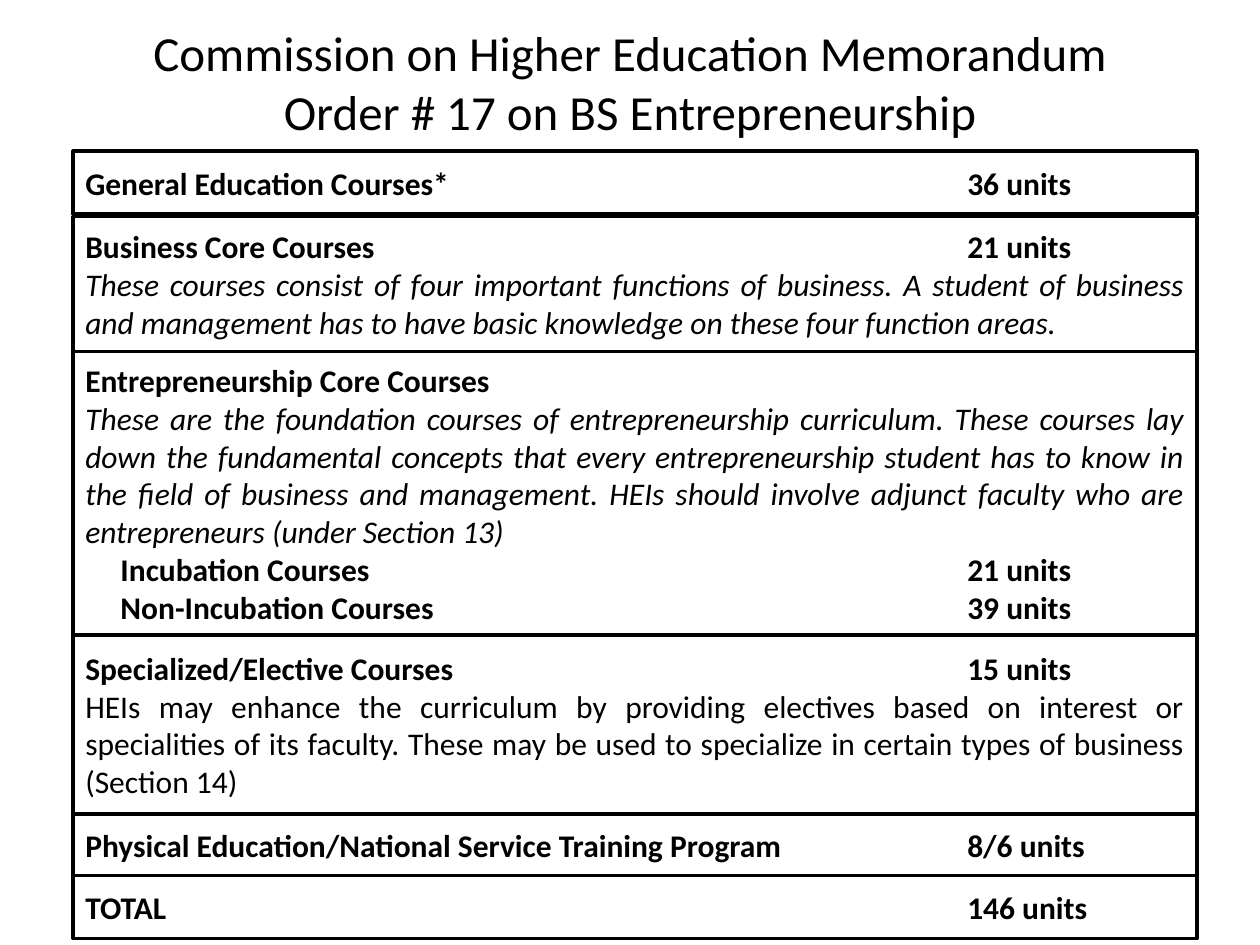
from dataclasses import dataclass

from lxml.etree import SubElement
from pptx import Presentation
from pptx.dml.color import RGBColor
from pptx.enum.shapes import MSO_SHAPE
from pptx.enum.text import MSO_ANCHOR, MSO_AUTO_SIZE, PP_ALIGN
from pptx.oxml.ns import qn
from pptx.util import Cm, Pt


@dataclass(frozen=True)
class Theme:
    """Colours, typeface and sizes of the slide."""
    font: str = "Calibri"
    ink: RGBColor = RGBColor(0x00, 0x00, 0x00)
    paper: RGBColor = RGBColor(0xFF, 0xFF, 0xFF)
    title_size: Pt = Pt(28)
    body_size: Pt = Pt(18)
    border: Pt = Pt(2)


@dataclass(frozen=True)
class Box:
    """A rectangle in centimetres."""
    left: float
    top: float
    width: float
    height: float


@dataclass(frozen=True)
class Line:
    """One paragraph of a course row."""
    text: str
    bold: bool = False
    italic: bool = False
    indented: bool = False


@dataclass(frozen=True)
class Row:
    """A course row with its height and the gap below it, in centimetres."""
    height: float
    lines: tuple
    gap: float = 0


THEME = Theme()
TITLE_BOX = Box(1.27, 0.05, 22.86, 3.18)
ROWS_BOX = Box(1.47, 3.05, 22.66, 15.87)
INDENT_TAB = 0.71
UNITS_TAB = 17.78
TITLE = "Commission on Higher Education Memorandum\vOrder # 17 on BS Entrepreneurship"
ROWS = (
    Row(1.27, (Line("General Education Courses*\t36 units", bold=True),), gap=0.05),
    Row(2.72, (
        Line("Business Core Courses\t21 units", bold=True),
        Line("These courses consist of four important functions of business. "
             "A student of business and management has to have basic knowledge "
             "on these four function areas.", italic=True),
    )),
    Row(5.71, (
        Line("Entrepreneurship Core Courses", bold=True),
        Line("These are the foundation courses of entrepreneurship curriculum. "
             "These courses lay down the fundamental concepts that every "
             "entrepreneurship student has to know in the field of business and "
             "management. HEIs should involve adjunct faculty who are "
             "entrepreneurs (under Section 13)", italic=True),
        Line("\tIncubation Courses\t21 units", bold=True, indented=True),
        Line("\tNon-Incubation Courses\t39 units", bold=True, indented=True),
    )),
    Row(3.61, (
        Line("Specialized/Elective Courses\t15 units", bold=True),
        Line("HEIs may enhance the curriculum by providing electives based on "
             "interest or specialities of its faculty. These may be used to "
             "specialize in certain types of business (Section 14)"),
    )),
    Row(1.24, (Line("Physical Education/National Service Training Program\t8/6 units",
                    bold=True),)),
    Row(1.27, (Line("TOTAL\t146 units", bold=True),)),
)


def style_font(font, size, bold=False, italic=False):
    """Apply the theme typeface and ink to a font."""
    font.name = THEME.font
    font.size = size
    font.bold = bold
    font.italic = italic
    font.color.rgb = THEME.ink


def add_tab_stops(para, positions):
    """Give a paragraph left tab stops at the given centimetres."""
    tab_list = SubElement(para._p.get_or_add_pPr(), qn("a:tabLst"))
    for position in positions:
        SubElement(tab_list, qn("a:tab"), pos=str(int(Cm(position))), algn="l")


def place_title(slide, box):
    """Move and format the title placeholder."""
    title = slide.shapes.title
    title.left, title.top = Cm(box.left), Cm(box.top)
    title.width, title.height = Cm(box.width), Cm(box.height)
    frame = title.text_frame
    frame.text = TITLE
    frame.auto_size = MSO_AUTO_SIZE.NONE
    frame.vertical_anchor = MSO_ANCHOR.MIDDLE
    para = frame.paragraphs[0]
    para.alignment = PP_ALIGN.CENTER
    style_font(para.font, THEME.title_size)


def fill_row(frame, lines):
    """Write the lines of one course row."""
    frame.word_wrap = True
    frame.vertical_anchor = MSO_ANCHOR.MIDDLE
    for index, line in enumerate(lines):
        para = frame.add_paragraph() if index else frame.paragraphs[0]
        para.text = line.text
        para.alignment = PP_ALIGN.JUSTIFY
        if "\t" in line.text:
            add_tab_stops(para, (INDENT_TAB, UNITS_TAB) if line.indented else (UNITS_TAB,))
        style_font(para.font, THEME.body_size, line.bold, line.italic)


def place_rows(slide, box):
    """Stack the bordered course rows from the top of the box."""
    top = box.top
    for row in ROWS:
        shape = slide.shapes.add_shape(
            MSO_SHAPE.RECTANGLE, Cm(box.left), Cm(top), Cm(box.width), Cm(row.height))
        shape.shadow.inherit = False
        shape.fill.solid()
        shape.fill.fore_color.rgb = THEME.paper
        shape.line.color.rgb = THEME.ink
        shape.line.width = THEME.border
        fill_row(shape.text_frame, row.lines)
        top += row.height + row.gap


def main():
    """Build the deck and save it."""
    deck = Presentation()
    deck.slide_width, deck.slide_height = Cm(25.4), Cm(19.05)
    slide = deck.slides.add_slide(deck.slide_layouts.get_by_name("Title Only"))
    place_title(slide, TITLE_BOX)
    place_rows(slide, ROWS_BOX)
    deck.save("out.pptx")


if __name__ == "__main__":
    main()
